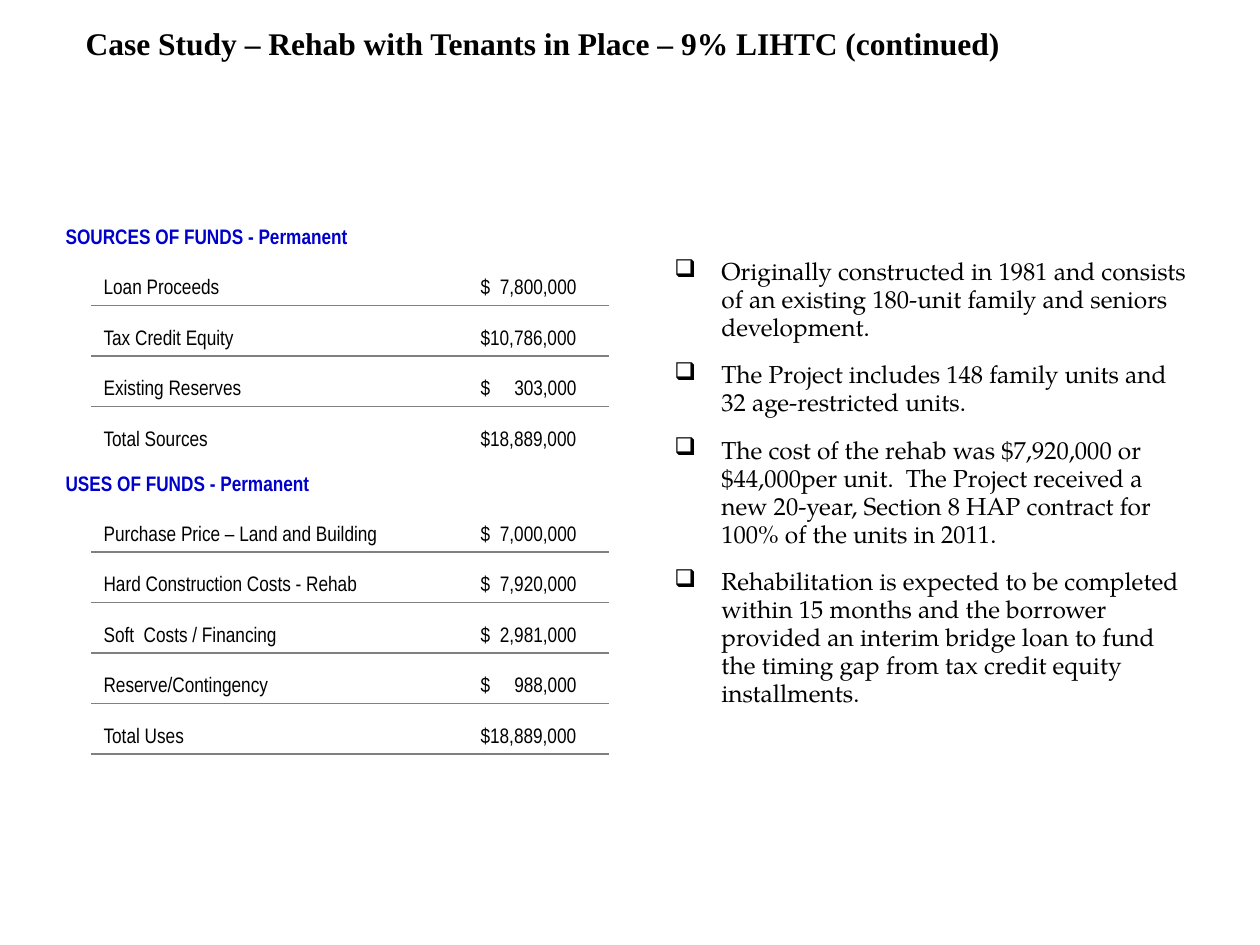
from lxml import etree
from pptx import Presentation
from pptx.dml.color import RGBColor
from pptx.enum.text import MSO_ANCHOR, MSO_AUTO_SIZE, PP_ALIGN
from pptx.oxml import parse_xml
from pptx.oxml.ns import nsdecls, qn
from pptx.util import Emu, Pt

MIDDLE, BOTTOM = MSO_ANCHOR.MIDDLE, MSO_ANCHOR.BOTTOM
LEFT, FIXED = PP_ALIGN.LEFT, MSO_AUTO_SIZE.NONE
BLACK = RGBColor(0, 0, 0)
BLUE = RGBColor(0, 0, 0xCC)
GREY = RGBColor(0x80, 0x80, 0x80)
SERIF, BOOK, NARROW = "Times New Roman", "TeX Gyre Pagella", "Arial Narrow"
PLAIN = "{2D5ABB26-0587-4C30-8999-92F81FD0307C}"
ROW, INDENT, TAB = 45, 47, 96

TITLE = "Case Study – Rehab with Tenants in Place – 9% LIHTC (continued)"
FUNDS = [
    ("SOURCES OF FUNDS - Permanent", None),
    ("Loan Proceeds", "$\t7,800,000"),
    ("Tax Credit Equity", "$10,786,000"),
    ("Existing Reserves", "$\t303,000"),
    ("Total Sources", "$18,889,000"),
    ("USES OF FUNDS - Permanent", None),
    ("Purchase Price – Land and Building", "$\t7,000,000"),
    ("Hard Construction Costs - Rehab", "$\t7,920,000"),
    ("Soft  Costs / Financing", "$\t2,981,000"),
    ("Reserve/Contingency", "$\t988,000"),
    ("Total Uses", "$18,889,000"),
]
TALL = {1: 38, 4: 49}
OPEN = "Total Sources"
POINTS = [
    "Originally constructed in 1981 and consists of an existing 180-unit "
    "family and seniors development.",
    "The Project includes 148 family units and 32 age-restricted units.",
    "The cost of the rehab was $7,920,000 or $44,000per unit.  The Project "
    "received a new 20-year, Section 8 HAP contract for 100% of the units "
    "in 2011.",
    "Rehabilitation is expected to be completed within 15 months and the "
    "borrower provided an interim bridge loan to fund the timing gap from "
    "tax credit equity installments.",
]


def px(n):
    """Turn slide pixels into EMU."""
    return Emu(round(n * 914400 / 126))


def add_run(para, text, font, size, color=BLACK, bold=False):
    """Add one formatted run to a paragraph."""
    run = para.add_run()
    run.text = text
    run.font.name, run.font.size, run.font.bold = font, Pt(size), bold
    run.font.color.rgb = color


def set_title(slide):
    """Place and fill the title."""
    title = slide.shapes.title
    title.left, title.top, title.width, title.height = map(px, (73, 18, 1155, 49))
    frame = title.text_frame
    frame.auto_size, frame.vertical_anchor = FIXED, MIDDLE
    para = frame.paragraphs[0]
    para.alignment = LEFT
    add_run(para, TITLE, SERIF, 18, bold=True)


def add_points(slide):
    """Add the list of project notes."""
    frame = slide.shapes.add_textbox(*map(px, (662, 252, 546, 557))).text_frame
    frame.word_wrap = True
    for i, text in enumerate(POINTS):
        para = frame.add_paragraph() if i else frame.paragraphs[0]
        props = para._p.get_or_add_pPr()
        props.set("marL", str(px(INDENT)))
        props.set("indent", str(-px(INDENT)))
        etree.SubElement(props, qn("a:buChar")).set("char", "❑")
        para.line_spacing = 0.95
        if i:
            para.space_before = Pt(11.2)
        add_run(para, text, BOOK, 14)


def add_rule(cell):
    """Draw a grey line along the bottom of a cell."""
    line = parse_xml(
        f'<a:lnB {nsdecls("a")} w="{Pt(1)}"><a:solidFill>'
        f'<a:srgbClr val="{GREY}"/></a:solidFill></a:lnB>')
    cell._tc.get_or_add_tcPr().insert(0, line)


def fill_cell(cell, text, color=BLACK, bold=False):
    """Write the text of one table cell."""
    cell.fill.background()
    cell.vertical_anchor = BOTTOM
    para = cell.text_frame.paragraphs[0]
    if "\t" in text:
        tabs = etree.SubElement(para._p.get_or_add_pPr(), qn("a:tabLst"))
        stop = etree.SubElement(tabs, qn("a:tab"))
        stop.set("pos", str(px(TAB)))
        stop.set("algn", "r")
    add_run(para, text, NARROW, 12, color, bold)


def add_funds(slide):
    """Add the table of sources and uses."""
    highs = [TALL.get(i, ROW) for i in range(len(FUNDS))]
    box = map(px, (53, 210, 556, sum(highs)))
    table = slide.shapes.add_table(len(FUNDS), 3, *box).table
    table.first_row = table.horz_banding = False
    table._tbl.tblPr.find(qn("a:tableStyleId")).text = PLAIN
    for col, wide in zip(table.columns, (38, 377, 141)):
        col.width = px(wide)
    for i, (name, amount) in enumerate(FUNDS):
        table.rows[i].height = px(highs[i])
        head, label, value = (table.cell(i, j) for j in range(3))
        if amount is None:
            head.merge(value)
            fill_cell(head, name, BLUE, True)
            continue
        head.fill.background()
        for cell, text in ((label, name), (value, amount)):
            fill_cell(cell, text)
            if name != OPEN:
                add_rule(cell)


def main():
    """Build and save the slide."""
    deck = Presentation()
    deck.slide_width, deck.slide_height = px(1260), px(945)
    slide = deck.slides.add_slide(deck.slide_layouts[5])
    set_title(slide)
    add_points(slide)
    add_funds(slide)
    deck.save("out.pptx")


if __name__ == "__main__":
    main()
